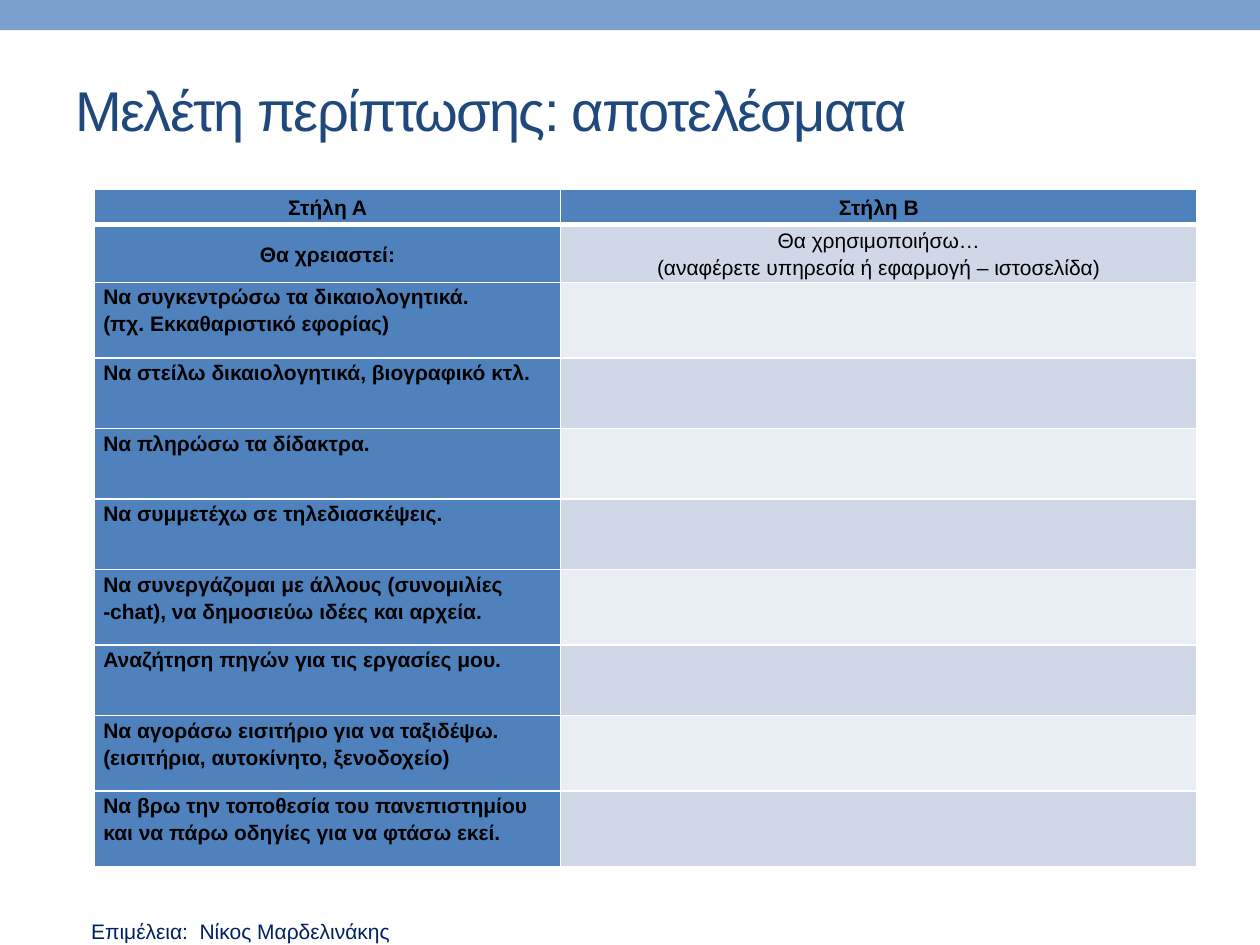
from lxml import etree
from pptx import Presentation
from pptx.dml.color import RGBColor
from pptx.enum.shapes import MSO_SHAPE
from pptx.enum.text import MSO_ANCHOR, PP_ALIGN
from pptx.oxml.ns import qn
from pptx.util import Inches, Pt

CENTER, LEFT = PP_ALIGN.CENTER, PP_ALIGN.LEFT
MIDDLE, TOP = MSO_ANCHOR.MIDDLE, MSO_ANCHOR.TOP
RECTANGLE = MSO_SHAPE.RECTANGLE

FONT = "Arial"
WIDTH, HEIGHT = 10, 7.5
BLUE, WHITE, BLACK = "4F81BD", "FFFFFF", "000000"
BANDS = ("E9EDF4", "D0D8E8")
COL_WIDTHS = (3.7, 5.05)
HEADER_HEIGHT, SUBHEADER_HEIGHT = 0.28, 0.4
ONE_LINE, TWO_LINES = 0.56, 0.6
TASKS = (
    ("Να συγκεντρώσω τα δικαιολογητικά.\n(πχ. Εκκαθαριστικό εφορίας)", TWO_LINES),
    ("Να στείλω δικαιολογητικά, βιογραφικό κτλ.", ONE_LINE),
    ("Να πληρώσω τα δίδακτρα.", ONE_LINE),
    ("Να συμμετέχω σε τηλεδιασκέψεις.", ONE_LINE),
    ("Να συνεργάζομαι με άλλους (συνομιλίες -chat), να δημοσιεύω ιδέες και αρχεία.", TWO_LINES),
    ("Αναζήτηση πηγών για τις εργασίες μου.", ONE_LINE),
    ("Να αγοράσω εισιτήριο για να ταξιδέψω.\n(εισιτήρια, αυτοκίνητο, ξενοδοχείο)", TWO_LINES),
    ("Να βρω την τοποθεσία του πανεπιστημίου και να πάρω οδηγίες για να φτάσω εκεί.", TWO_LINES),
)


def rgb(value):
    """Turn a hex string into a colour."""
    return RGBColor.from_string(value)


def box(left, top, width, height):
    """Turn shares of the slide's size into lengths."""
    return (Inches(left * WIDTH), Inches(top * HEIGHT),
            Inches(width * WIDTH), Inches(height * HEIGHT))


def write(tf, text, size, color, align=LEFT, bold=False):
    """Write one paragraph, a run for each line, and return it."""
    tf.word_wrap = True
    p = tf.paragraphs[0]
    p.alignment = align
    for i, line in enumerate(text.split("\n")):
        if i:
            p.add_line_break()
        r = p.add_run()
        r.text = line
        r.font.name, r.font.size, r.font.bold = FONT, Pt(size), bold
        r.font.color.rgb = rgb(color)
    return p


def add_band(slide):
    """Add the translucent band along the top edge."""
    sp = slide.shapes.add_shape(RECTANGLE, *box(0, 0, 1, 0.032))
    sp.shadow.inherit = False
    sp.fill.solid()
    sp.fill.fore_color.rgb = rgb(BLUE)
    sp.line.fill.background()
    color = sp.fill._xPr.find(".//" + qn("a:srgbClr"))
    etree.SubElement(color, qn("a:alpha"), val="75000")


def set_title(slide, text):
    """Place and format the title placeholder."""
    sp = slide.shapes.title
    sp.left, sp.top, sp.width, sp.height = box(0.05, 0.077, 0.9, 0.076)
    sp.text_frame.vertical_anchor = MIDDLE
    p = write(sp.text_frame, text, 32, "1F497D")
    p.runs[0].font._element.set("spc", "-100")


def add_credit(slide, text):
    """Add the credit line at the bottom left."""
    tf = slide.shapes.add_textbox(*box(0, 0.961, 0.382, 0.048)).text_frame
    tf.vertical_anchor = MIDDLE
    write(tf, text, 12, "002060", CENTER)


def set_borders(cell, bottom):
    """Draw white borders, with the bottom width in points."""
    tcPr = cell._tc.get_or_add_tcPr()
    sides = (("L", 1), ("R", 1), ("T", 1), ("B", bottom))
    for i, (side, width) in enumerate(sides):
        ln = etree.Element(qn("a:ln" + side), w=str(Pt(width)))
        fill = etree.SubElement(ln, qn("a:solidFill"))
        etree.SubElement(fill, qn("a:srgbClr"), val=WHITE)
        tcPr.insert(i, ln)


def fill_cell(cell, text, fill, heading=False, bold=True):
    """Fill a cell and write its text, if any."""
    cell.fill.solid()
    cell.fill.fore_color.rgb = rgb(fill)
    cell.margin_left = cell.margin_right = Inches(0.07)
    cell.margin_top = cell.margin_bottom = 0
    cell.vertical_anchor = MIDDLE if heading else TOP
    if text:
        p = write(cell.text_frame, text, 12, BLACK, CENTER if heading else LEFT, bold)
        p.line_spacing = 1.15
        p.space_before = Pt(0 if heading else 3)
        p.space_after = Pt(10 if heading else 3)


def add_task_table(slide):
    """Add the two-column table of tasks and answers."""
    heights = [HEADER_HEIGHT, SUBHEADER_HEIGHT] + [h for _, h in TASKS]
    frame = slide.shapes.add_table(len(heights), len(COL_WIDTHS), Inches(0.75), Inches(1.5),
                                   Inches(sum(COL_WIDTHS)), Inches(sum(heights)))
    table = frame.table
    for col, width in zip(table.columns, COL_WIDTHS):
        col.width = Inches(width)
    for row, height in zip(table.rows, heights):
        row.height = Inches(height)
    fill_cell(table.cell(0, 0), "Στήλη Α", BLUE, heading=True)
    fill_cell(table.cell(0, 1), "Στήλη Β", BLUE, heading=True)
    fill_cell(table.cell(1, 0), "Θα χρειαστεί:", BLUE, heading=True)
    fill_cell(table.cell(1, 1), "Θα χρησιμοποιήσω…\n(αναφέρετε υπηρεσία ή εφαρμογή – ιστοσελίδα)",
              BANDS[1], heading=True, bold=False)
    for i, (task, _) in enumerate(TASKS):
        fill_cell(table.cell(i + 2, 0), task, BLUE)
        fill_cell(table.cell(i + 2, 1), "", BANDS[i % 2])
    for i, row in enumerate(table.rows):
        for cell in row.cells:
            set_borders(cell, 3 if i == 0 else 1)


def main():
    """Build the slide and save it."""
    prs = Presentation()
    prs.slide_width, prs.slide_height = Inches(WIDTH), Inches(HEIGHT)
    slide = prs.slides.add_slide(prs.slide_layouts[5])
    add_band(slide)
    set_title(slide, "Μελέτη περίπτωσης: αποτελέσματα")
    add_credit(slide, "Επιμέλεια:  Νίκος Μαρδελινάκης")
    add_task_table(slide)
    prs.save("out.pptx")


if __name__ == "__main__":
    main()
